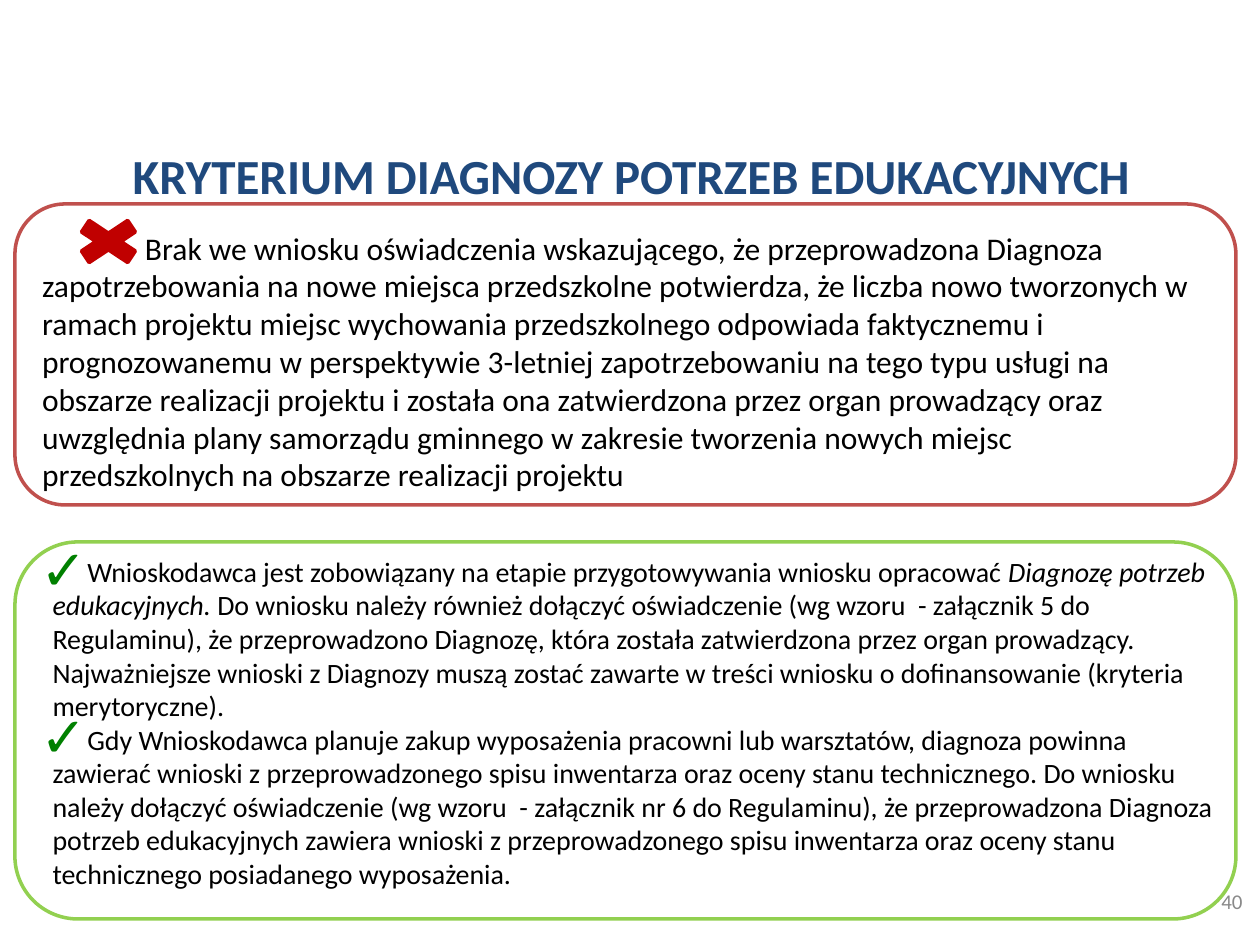
from lxml import etree
from pptx import Presentation
from pptx.dml.color import RGBColor
from pptx.enum.shapes import MSO_SHAPE
from pptx.enum.text import MSO_ANCHOR, MSO_AUTO_SIZE, PP_ALIGN
from pptx.oxml.ns import qn
from pptx.util import Emu, Pt

ROUNDED = MSO_SHAPE.ROUNDED_RECTANGLE
CROSS = MSO_SHAPE.MATH_MULTIPLY
TOP, MIDDLE = MSO_ANCHOR.TOP, MSO_ANCHOR.MIDDLE
LEFT, CENTER, RIGHT = PP_ALIGN.LEFT, PP_ALIGN.CENTER, PP_ALIGN.RIGHT
NO_FIT = MSO_AUTO_SIZE.NONE
FONT = "Calibri"
BLACK, RED, GREEN = "000000", "C00000", "008000"

TITLE = "KRYTERIUM DIAGNOZY POTRZEB EDUKACYJNYCH"
MISSING = (
    "Brak we wniosku oświadczenia wskazującego, że przeprowadzona Diagnoza "
    "zapotrzebowania na nowe miejsca przedszkolne potwierdza, że liczba nowo "
    "tworzonych w ramach projektu miejsc wychowania przedszkolnego odpowiada "
    "faktycznemu i prognozowanemu w perspektywie 3-letniej zapotrzebowaniu na "
    "tego typu usługi na obszarze realizacji projektu i została ona zatwierdzona "
    "przez organ prowadzący oraz uwzględnia plany samorządu gminnego w zakresie "
    "tworzenia nowych miejsc przedszkolnych na obszarze realizacji projektu"
)
# Each requirement is a list of (text, italic) runs
REQUIREMENTS = [
    [
        ("Wnioskodawca jest zobowiązany na etapie przygotowywania wniosku "
         "opracować ", False),
        ("Diagnozę potrzeb edukacyjnych. ", True),
        ("Do wniosku należy również dołączyć oświadczenie (wg wzoru  - załącznik 5 "
         "do Regulaminu), że przeprowadzono Diagnozę, która została zatwierdzona "
         "przez organ prowadzący. Najważniejsze wnioski z Diagnozy muszą zostać "
         "zawarte w treści wniosku o dofinansowanie (kryteria merytoryczne).", False),
    ],
    [
        ("Gdy Wnioskodawca planuje zakup wyposażenia pracowni lub warsztatów, "
         "diagnoza powinna zawierać wnioski z przeprowadzonego spisu inwentarza "
         "oraz oceny stanu technicznego. Do wniosku należy dołączyć oświadczenie "
         "(wg wzoru  - załącznik nr 6 do Regulaminu), że przeprowadzona Diagnoza "
         "potrzeb edukacyjnych zawiera wnioski z przeprowadzonego spisu inwentarza "
         "oraz oceny stanu technicznego posiadanego wyposażenia.", False),
    ],
]


def px(n):
    return Emu(round(n * 914400 / 126))


def color(value):
    return RGBColor.from_string(value)


def place(sp, x, y, w, h):
    sp.left, sp.top, sp.width, sp.height = px(x), px(y), px(w), px(h)


def set_frame(sp, anchor):
    tf = sp.text_frame
    tf.word_wrap = True
    tf.auto_size = NO_FIT
    tf.vertical_anchor = anchor
    return tf


def add_run(p, text, size, hex_color=BLACK, bold=False, italic=False):
    r = p.add_run()
    r.text = text
    font = r.font
    font.name, font.size, font.bold, font.italic = FONT, Pt(size), bold, italic
    font.color.rgb = color(hex_color)


def add_outline(slide, preset, box, line, fill=None):
    sp = slide.shapes.add_shape(preset, *map(px, box))
    sp.shadow.inherit = False
    if fill:
        sp.fill.solid()
        sp.fill.fore_color.rgb = color(fill)
    else:
        sp.fill.background()
    sp.line.color.rgb = color(line)
    sp.line.width = Pt(2)
    return sp


def set_indent(p, margin, first):
    pPr = p._p.get_or_add_pPr()
    pPr.set("marL", str(px(margin)))
    pPr.set("indent", str(px(first)))
    return pPr


def add_check_bullet(p):
    pPr = set_indent(p, 12, -12)
    clr = etree.SubElement(pPr, qn("a:buClr"))
    etree.SubElement(clr, qn("a:srgbClr"), val=GREEN)
    etree.SubElement(pPr, qn("a:buSzPct"), val="200000")
    etree.SubElement(pPr, qn("a:buFont"), typeface=FONT)
    etree.SubElement(pPr, qn("a:buChar"), char="✓")


def fill_title(sp):
    place(sp, 64, 145, 1134, 60)
    p = set_frame(sp, MIDDLE).paragraphs[0]
    p.alignment = CENTER
    add_run(p, TITLE, 28, "1F497D", bold=True)


def fill_requirements(sp):
    place(sp, 28, 548, 1207, 352)
    tf = set_frame(sp, TOP)
    for i, runs in enumerate(REQUIREMENTS):
        p = tf.add_paragraph() if i else tf.paragraphs[0]
        add_check_bullet(p)
        p.space_before = Pt(0)
        for text, italic in runs:
            add_run(p, text, 16, italic=italic)


def add_missing_box(slide):
    sp = add_outline(slide, ROUNDED, (15, 204, 1221, 301), "C0504D")
    tf = set_frame(sp, TOP)
    tf.margin_top = px(10)
    p = tf.paragraphs[0]
    p.alignment = LEFT
    set_indent(p, 0, 103)  # leaves room for the cross
    add_run(p, MISSING, 18)


def add_page_number(slide, number):
    sp = slide.shapes.add_textbox(px(961), px(876), px(294), px(50))
    p = set_frame(sp, MIDDLE).paragraphs[0]
    p.alignment = RIGHT
    add_run(p, number, 12, "898989")


def main():
    prs = Presentation()
    prs.slide_width, prs.slide_height = px(1260), px(945)
    slide = prs.slides.add_slide(prs.slide_layouts[1])
    fill_title(slide.shapes.title)
    fill_requirements(slide.placeholders[1])
    add_outline(slide, ROUNDED, (15, 542, 1221, 377), "92D050")
    add_page_number(slide, "40")
    add_missing_box(slide)
    add_outline(slide, CROSS, (64, 212, 89, 59), RED, fill=RED)
    prs.save("out.pptx")


if __name__ == "__main__":
    main()
